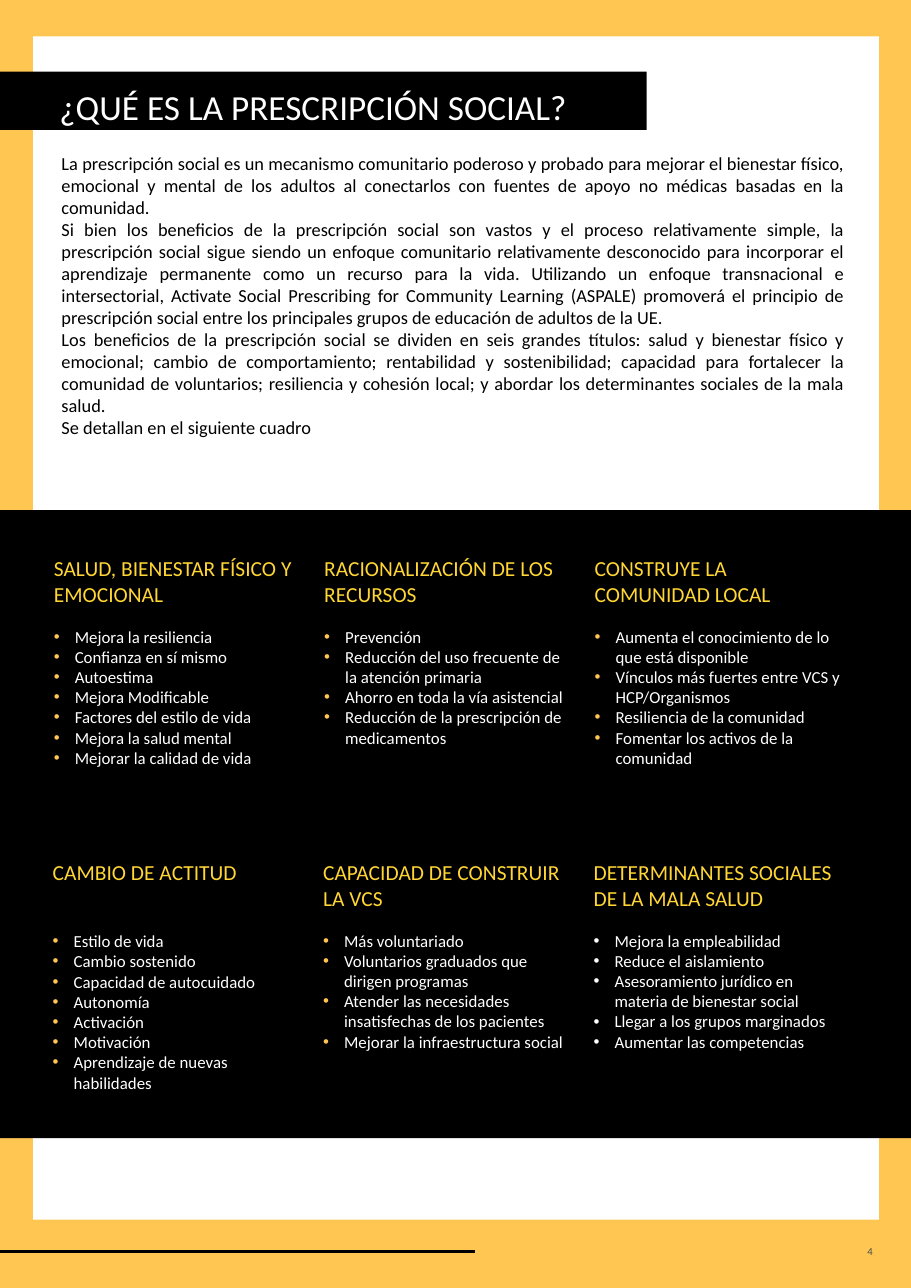
import pptx
import pptx.dml.color
import pptx.enum.shapes
import pptx.enum.text
import pptx.oxml.ns
import pptx.util
from lxml import etree

Inches, Pt = pptx.util.Inches, pptx.util.Pt
ALIGN = pptx.enum.text.PP_ALIGN
MIDDLE = pptx.enum.text.MSO_ANCHOR.MIDDLE
AMBER, YELLOW, BLACK, WHITE, GREY = "FFC652", "FFD634", "000000", "FFFFFF", "4B4B4B"
PAGE_WIDTH, PAGE_HEIGHT = 8.27, 11.69

INTRODUCTION = [
    "La prescripción social es un mecanismo comunitario poderoso y probado para mejorar el bienestar físico, "
    "emocional y mental de los adultos al conectarlos con fuentes de apoyo no médicas basadas en la comunidad.",
    "Si bien los beneficios de la prescripción social son vastos y el proceso relativamente simple, la "
    "prescripción social sigue siendo un enfoque comunitario relativamente desconocido para incorporar el "
    "aprendizaje permanente como un recurso para la vida. Utilizando un enfoque transnacional e intersectorial, "
    "Activate Social Prescribing for Community Learning (ASPALE) promoverá el principio de prescripción social "
    "entre los principales grupos de educación de adultos de la UE.",
    "Los beneficios de la prescripción social se dividen en seis grandes títulos: salud y bienestar físico y "
    "emocional; cambio de comportamiento; rentabilidad y sostenibilidad; capacidad para fortalecer la comunidad "
    "de voluntarios; resiliencia y cohesión local; y abordar los determinantes sociales de la mala salud.",
    "Se detallan en el siguiente cuadro",
]

BENEFITS = [
    ("SALUD, BIENESTAR FÍSICO Y EMOCIONAL", 2, AMBER, [
        "Mejora la resiliencia", "Confianza en sí mismo", "Autoestima", "Mejora Modificable",
        "Factores del estilo de vida", "Mejora la salud mental", "Mejorar la calidad de vida"]),
    ("RACIONALIZACIÓN DE LOS RECURSOS", 2, AMBER, [
        "Prevención", "Reducción del uso frecuente de la atención primaria",
        "Ahorro en toda la vía asistencial", "Reducción de la prescripción de medicamentos"]),
    ("CONSTRUYE LA COMUNIDAD LOCAL", 2, AMBER, [
        "Aumenta el conocimiento de lo que está disponible",
        "Vínculos más fuertes entre VCS y HCP/Organismos",
        "Resiliencia de la comunidad", "Fomentar los activos de la comunidad"]),
    ("CAMBIO DE ACTITUD", 1, AMBER, [
        "Estilo de vida", "Cambio sostenido", "Capacidad de autocuidado", "Autonomía",
        "Activación", "Motivación", "Aprendizaje de nuevas habilidades"]),
    ("CAPACIDAD DE CONSTRUIR LA VCS", 2, AMBER, [
        "Más voluntariado", "Voluntarios graduados que dirigen programas",
        "Atender las necesidades insatisfechas de los pacientes", "Mejorar la infraestructura social"]),
    ("DETERMINANTES SOCIALES DE LA MALA SALUD", 2, WHITE, [
        "Mejora la empleabilidad", "Reduce el aislamiento",
        "Asesoramiento jurídico en materia de bienestar social",
        "Llegar a los grupos marginados", "Aumentar las competencias"]),
]


def rgb(color):
    """Turn a hex string into a colour."""
    return pptx.dml.color.RGBColor.from_string(color)


def add_panel(slide, left, top, width, height, color):
    """Add a plain filled rectangle."""
    panel = slide.shapes.add_shape(pptx.enum.shapes.MSO_SHAPE.RECTANGLE, Inches(left), Inches(top),
                                   Inches(width), Inches(height))
    panel.shadow.inherit = False
    panel.fill.solid()
    panel.fill.fore_color.rgb = rgb(color)
    panel.line.fill.background()
    return panel


def add_text_frame(slide, left, top, width, height):
    """Add a wrapping text box and return its frame."""
    frame = slide.shapes.add_textbox(Inches(left), Inches(top), Inches(width), Inches(height)).text_frame
    frame.word_wrap = True
    return frame


def add_run(paragraph, text, size, color):
    """Add one Calibri run to a paragraph."""
    run = paragraph.add_run()
    run.text = text
    run.font.name = "Calibri"
    run.font.size = Pt(size)
    run.font.color.rgb = rgb(color)


def set_bullet(paragraph, color):
    """Give a paragraph a hanging coloured bullet."""
    properties = paragraph._p.get_or_add_pPr()
    properties.set("marL", str(Inches(0.19)))
    properties.set("indent", str(-Inches(0.19)))
    qn = pptx.oxml.ns.qn
    bullet_color = etree.SubElement(properties, qn("a:buClr"))
    etree.SubElement(bullet_color, qn("a:srgbClr"), val=color)
    etree.SubElement(properties, qn("a:buFont"), typeface="Arial")
    etree.SubElement(properties, qn("a:buChar"), char="•")


def add_frame(slide, width, height):
    """Draw the amber border, the white page and the footer rule and number."""
    add_panel(slide, 0, 0, width, height, AMBER)
    add_panel(slide, 0.3, 0.33, width - 0.59, height - 0.95, WHITE)
    footer = height - 0.33
    rule = slide.shapes.add_connector(pptx.enum.shapes.MSO_CONNECTOR.STRAIGHT, 0, Inches(footer),
                                      Inches(4.31), Inches(footer))
    rule.line.color.rgb = rgb(BLACK)
    rule.line.width = Pt(1.5)
    etree.SubElement(rule._element.spPr, pptx.oxml.ns.qn("a:effectLst"))
    number = add_text_frame(slide, width - 1.33, footer - 0.08, 1.08, 0.16)
    number.margin_top = number.margin_bottom = 0
    number.vertical_anchor = MIDDLE
    number.paragraphs[0].alignment = ALIGN.RIGHT
    add_run(number.paragraphs[0], "4", 7, GREY)


def add_title(slide, left, top, width, height):
    """Draw the black title band."""
    frame = add_panel(slide, left, top, width, height, BLACK).text_frame
    frame.margin_left = Inches(0.54)
    frame.margin_top, frame.margin_bottom = Inches(0.11), 0
    frame.vertical_anchor = MIDDLE
    frame.paragraphs[0].alignment = ALIGN.LEFT
    add_run(frame.paragraphs[0], "¿QUÉ ES LA PRESCRIPCIÓN SOCIAL?", 23, WHITE)


def add_introduction(slide, left, top, width, height):
    """Write the justified introduction."""
    frame = add_text_frame(slide, left, top, width, height)
    for index, text in enumerate(INTRODUCTION):
        paragraph = frame.add_paragraph() if index else frame.paragraphs[0]
        paragraph.alignment = ALIGN.JUSTIFY
        add_run(paragraph, text, 12, BLACK)


def add_benefit(slide, left, top, width, height, benefit):
    """Write one benefit heading with its bullets, aligned below two heading lines."""
    heading, heading_lines, bullet_color, points = benefit
    frame = add_text_frame(slide, left, top, width, height)
    add_run(frame.paragraphs[0], heading, 14, YELLOW)
    frame.paragraphs[0].space_after = Pt(12.8 + 17.1 * (2 - heading_lines))
    for point in points:
        paragraph = frame.add_paragraph()
        set_bullet(paragraph, bullet_color)
        add_run(paragraph, point, 11, WHITE)


def add_benefits(slide, left, top, width, height):
    """Draw the black panel with its three-by-two grid of benefits."""
    add_panel(slide, left, top, width, height, BLACK)
    for index, benefit in enumerate(BENEFITS):
        row, column = divmod(index, 3)
        add_benefit(slide, left + 0.39 - 0.01 * row + 2.455 * column, top + 0.36 + 2.76 * row,
                    2.48, 2.77, benefit)


def main():
    """Build and save the page."""
    presentation = pptx.Presentation()
    presentation.slide_width = Inches(PAGE_WIDTH)
    presentation.slide_height = Inches(PAGE_HEIGHT)
    slide = presentation.slides.add_slide(presentation.slide_layouts[6])
    add_frame(slide, PAGE_WIDTH, PAGE_HEIGHT)
    add_benefits(slide, 0, 4.63, PAGE_WIDTH, 5.7)
    add_introduction(slide, 0.46, 1.33, 7.31, 2.8)
    add_title(slide, 0, 0.65, 5.87, 0.53)
    presentation.save("out.pptx")


if __name__ == "__main__":
    main()
